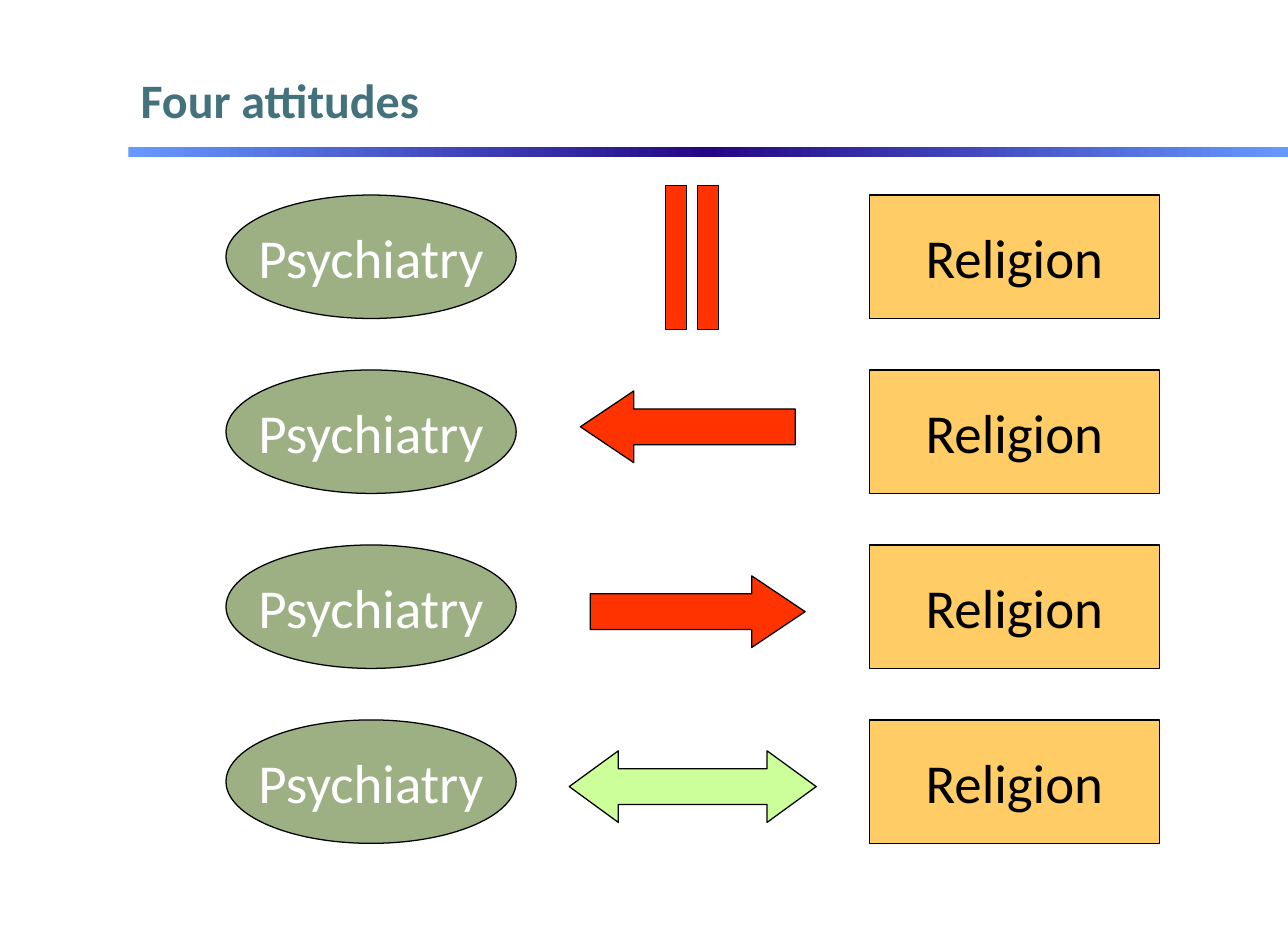
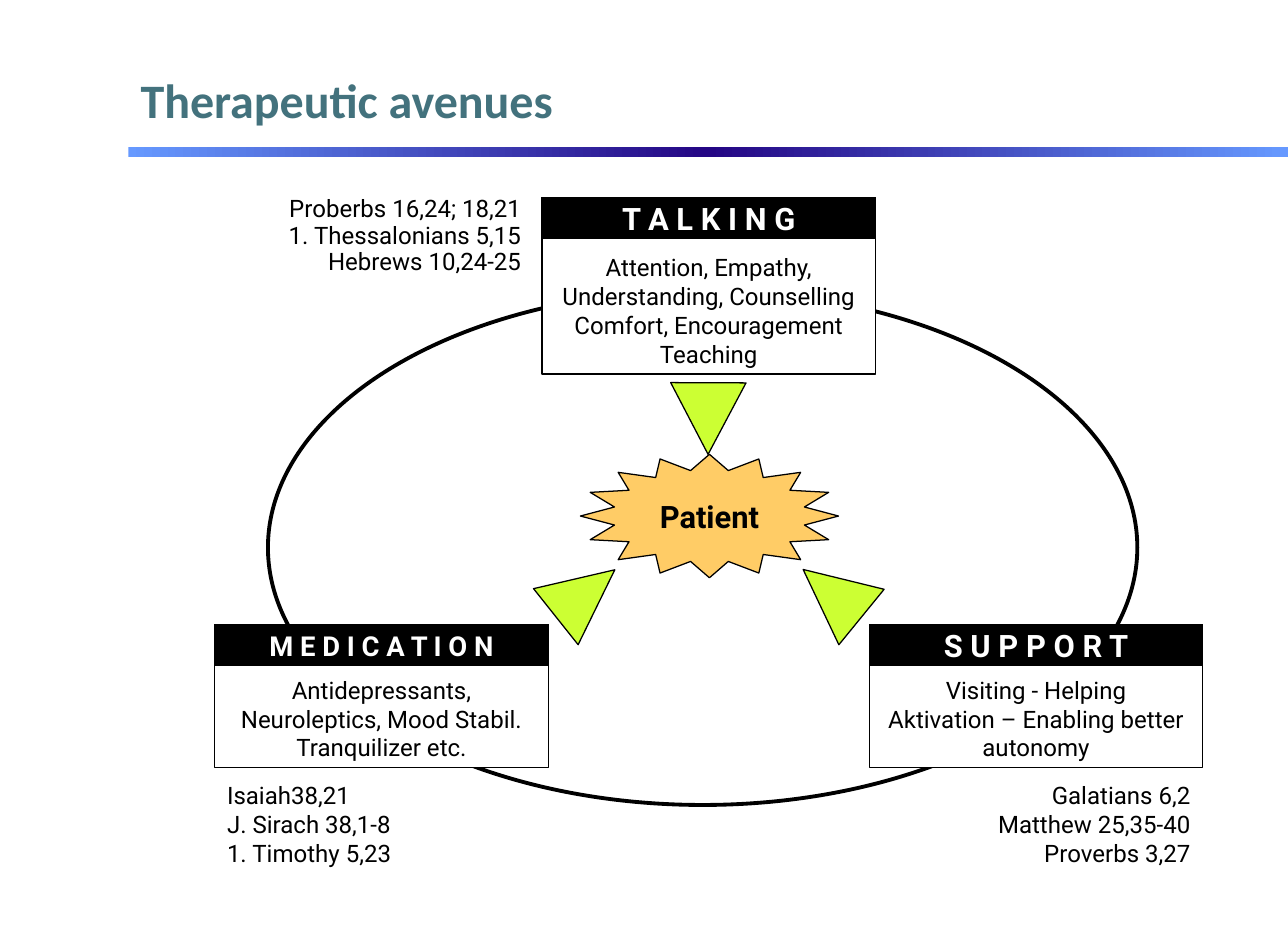
import copy

import pptx
import pptx.dml.color
import pptx.enum.shapes
import pptx.enum.text
import pptx.util

SHAPE = pptx.enum.shapes.MSO_SHAPE
ALIGN = pptx.enum.text.PP_ALIGN
ANCHOR = pptx.enum.text.MSO_ANCHOR
IN = pptx.util.Inches
PT = pptx.util.Pt

SLIDE_W, SLIDE_H = 10.43, 7.5
MARGIN = 1.04
HEAD_FONT, BODY_FONT = "Calibri", "Roboto"
BLACK, WHITE = "000000", "FFFFFF"
TEAL, SAGE, AMBER, RED = "43727D", "9CB084", "FFCC66", "FF3300"
MINT, LIME = "CCFF99", "CCFF33"
RULE_STOPS = [(0, "6699FF"), (0.5, "240684"), (1, "6699FF")]


def rgb(hex_code):
    return pptx.dml.color.RGBColor.from_string(hex_code)


def add_shape(s, kind, box, fill=None, weight=0.75, adjustments=(), rotation=0):
    sp = s.shapes.add_shape(kind, *map(IN, box))
    sp.shadow.inherit = False
    if fill:
        sp.fill.solid()
        sp.fill.fore_color.rgb = rgb(fill)
    else:
        sp.fill.background()
    sp.line.color.rgb = rgb(BLACK)
    sp.line.width = PT(weight)
    for i, value in enumerate(adjustments):
        sp.adjustments[i] = value
    sp.rotation = rotation
    return sp


def write(sp, lines, size, color=BLACK, font=BODY_FONT, bold=False,
          align=ALIGN.CENTER, anchor=ANCHOR.MIDDLE, wrap=True, pitch=None):
    """Fill a shape with one paragraph a line; pitch is the line distance in points."""
    tf = sp.text_frame
    tf.word_wrap = wrap
    tf.vertical_anchor = anchor
    for i, line in enumerate(lines):
        p = tf.add_paragraph() if i else tf.paragraphs[0]
        p.alignment = align
        if pitch:
            p.line_spacing = PT(pitch)
        r = p.add_run()
        r.text = line
        r.font.name = font
        r.font.size = PT(size)
        r.font.bold = bold
        r.font.color.rgb = rgb(color)


def add_text(s, box, lines, size, **style):
    write(s.shapes.add_textbox(*map(IN, box)), lines, size, **style)


def add_rule(s, box):
    sp = add_shape(s, SHAPE.RECTANGLE, box)
    sp.line.fill.background()
    sp.fill.gradient()
    sp.fill.gradient_angle = 0
    stops = sp.fill._fill._gradFill.gsLst
    stops.insert(1, copy.deepcopy(stops[0]))
    for stop, (position, color) in zip(sp.fill.gradient_stops, RULE_STOPS):
        stop.position = position
        stop.color.rgb = rgb(color)


def titled_slide(prs, title):
    s = prs.slides.add_slide(prs.slide_layouts[6])
    add_rule(s, (MARGIN, 1.19, SLIDE_W - MARGIN, 0.08))
    add_text(s, (MARGIN, 0.44, 9.02, 0.72), [title], 28, color=TEAL,
             font=HEAD_FONT, bold=True, align=ALIGN.LEFT)
    return s


def attitude_row(s, left, top, width, height):
    """Place the two fields at both ends of a row."""
    node_w = 2.35
    for kind, x, fill, label, color in (
            (SHAPE.OVAL, left, SAGE, "Psychiatry", WHITE),
            (SHAPE.RECTANGLE, left + width - node_w, AMBER, "Religion", BLACK)):
        sp = add_shape(s, kind, (x, top, node_w, height), fill)
        write(sp, [label], 32, color, HEAD_FONT, wrap=False)


def attitudes_slide(prs):
    s = titled_slide(prs, "Four attitudes")
    row_tops = [1.58 + 1.417 * i for i in range(4)]
    for top in row_tops:
        attitude_row(s, 1.83, top, 7.56, 1)
    for x in (5.39, 5.65):
        add_shape(s, SHAPE.RECTANGLE, (x, row_tops[0] - 0.08, 0.17, 1.17), RED)
    arrows = [(SHAPE.LEFT_ARROW, 4.7, 0.17, 1.74, RED, 0.745),
              (SHAPE.RIGHT_ARROW, 4.78, 0.25, 1.74, RED, 0.745),
              (SHAPE.LEFT_RIGHT_ARROW, 4.61, 0.25, 2, MINT, 0.686)]
    for top, (kind, x, drop, width, fill, head) in zip(row_tops[1:], arrows):
        add_shape(s, kind, (x, top + drop, width, 0.58), fill, adjustments=(0.5, head))


def avenue_card(s, box, heading, size, lines):
    x, y, w, h = box
    body = add_shape(s, SHAPE.RECTANGLE, box, WHITE)
    write(body, lines, 14, anchor=ANCHOR.BOTTOM)
    band = add_shape(s, SHAPE.RECTANGLE, (x, y, w, 0.33), BLACK)
    write(band, [heading], size, WHITE, bold=True)


def avenues_slide(prs):
    s = titled_slide(prs, "Therapeutic avenues")
    add_shape(s, SHAPE.OVAL, (2.17, 2.35, 7.04, 4.17), weight=2.25)

    card_w, low_top, low_h = 2.7, 5.06, 1.16
    avenue_card(s, (4.39, 1.6, card_w, 1.43), "T A L K I N G", 18,
                ["Attention, Empathy,", "Understanding, Counselling",
                 "Comfort, Encouragement", "Teaching"])
    avenue_card(s, (7.04, low_top, card_w, low_h), "S U P P O R T", 18,
                ["Visiting - Helping", "Aktivation – Enabling better", "autonomy"])
    avenue_card(s, (1.74, low_top, card_w, low_h), "M E D I C A T I O N", 16,
                ["Antidepressants,", "Neuroleptics, Mood Stabil.", "Tranquilizer etc."])

    star = add_shape(s, SHAPE.STAR_16_POINT, (4.7, 3.68, 2.09, 1), AMBER,
                     adjustments=(0.375,))
    write(star, ["Patient"], 18, bold=True, wrap=False)
    for box, rotation in (((4.45, 4.5, 0.58, 0.61), 51.5),
                          ((6.45, 4.5, 0.58, 0.61), 309.2),
                          ((5.43, 3.1, 0.61, 0.58), 180.2)):
        add_shape(s, SHAPE.ISOSCELES_TRIANGLE, box, LIME, rotation=rotation)

    verse_w = 2.16
    for x, y, h, align, pitch, verses in (
            (2.16, 1.56, 0.7, ALIGN.RIGHT, 15.4,
             ["Proberbs 16,24; 18,21", "1. Thessalonians 5,15", "Hebrews 10,24-25"]),
            (1.74, 6.29, 0.76, ALIGN.LEFT, 17.1,
             ["Isaiah38,21", "J. Sirach 38,1-8", "1. Timothy 5,23"]),
            (9.74 - verse_w, 6.29, 0.76, ALIGN.RIGHT, 17.1,
             ["Galatians 6,2", "Matthew 25,35-40", "Proverbs 3,27"])):
        add_text(s, (x, y, verse_w, h), verses, 14, align=align, pitch=pitch)


def main():
    prs = pptx.Presentation()
    prs.slide_width, prs.slide_height = IN(SLIDE_W), IN(SLIDE_H)
    attitudes_slide(prs)
    avenues_slide(prs)
    prs.save("out.pptx")


if __name__ == "__main__":
    main()
